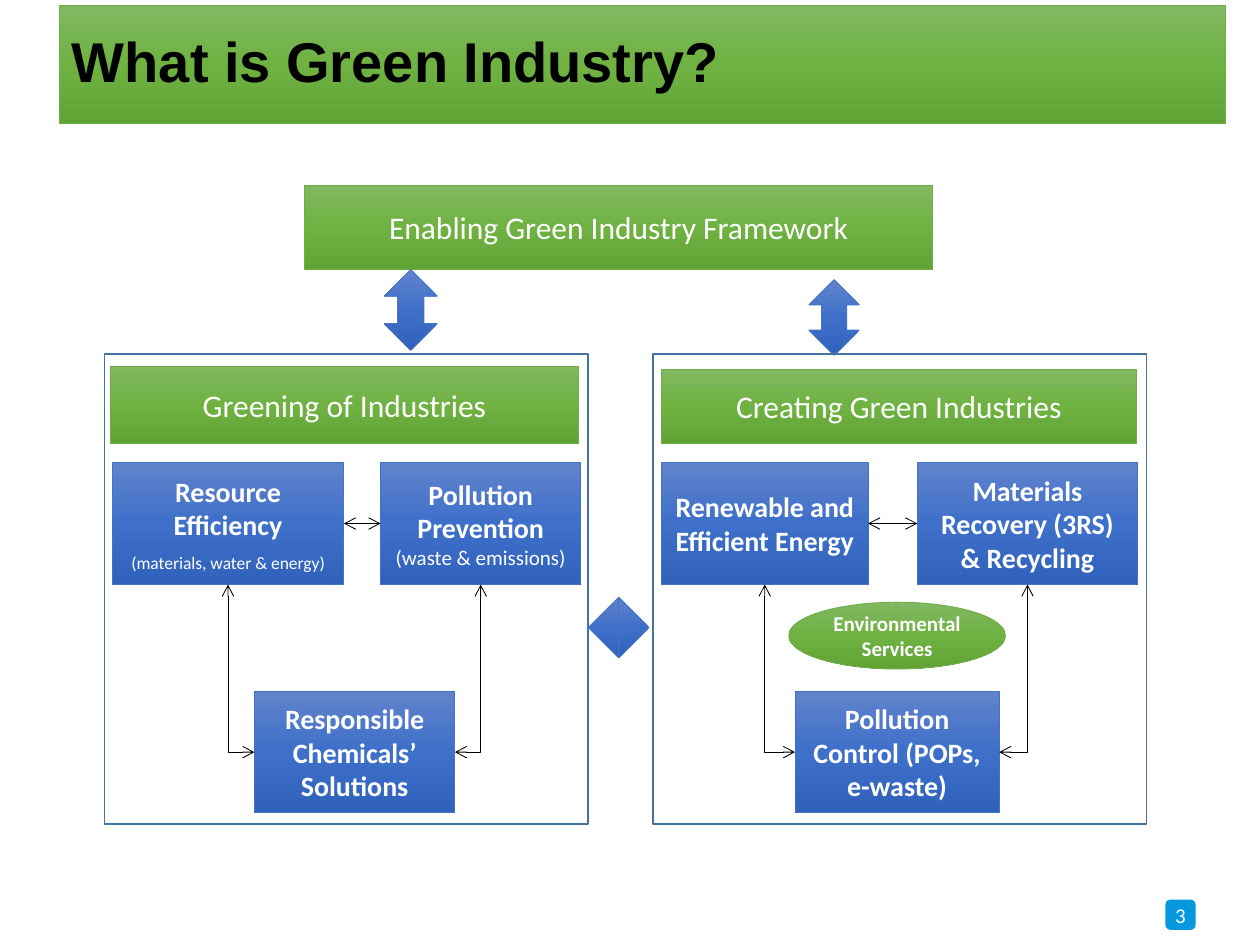
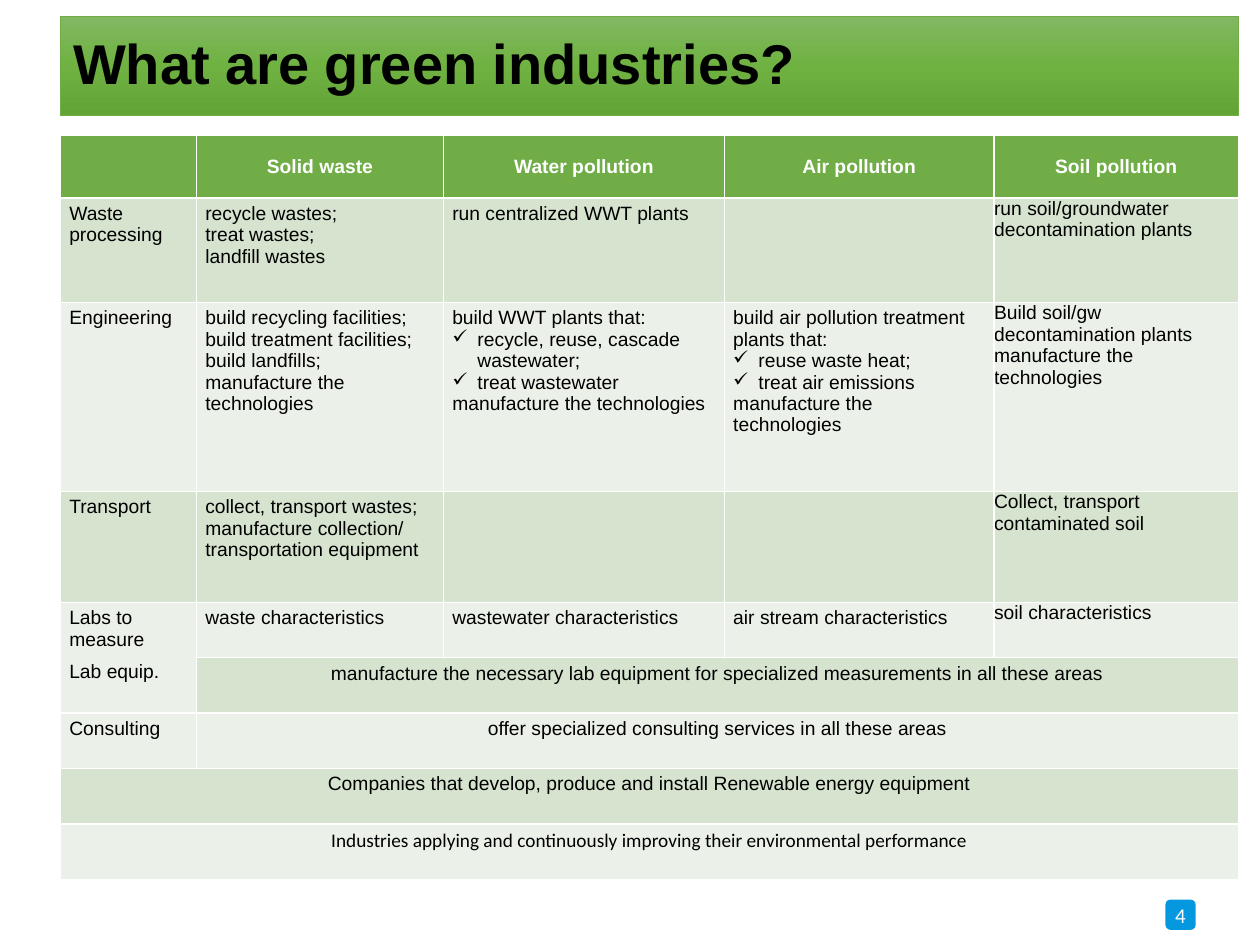
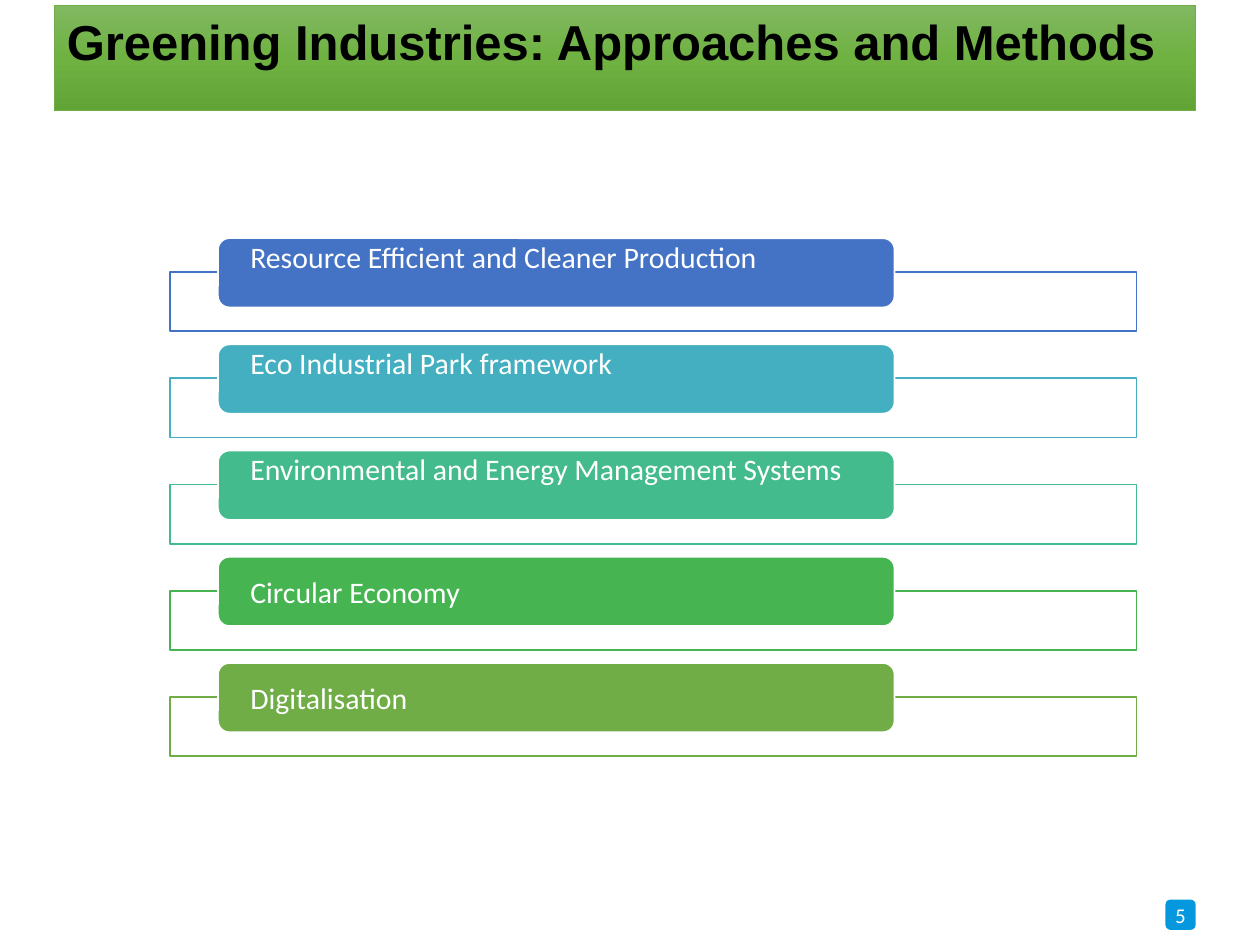
import copy

import pptx
import pptx.dml.color
import pptx.enum.shapes
import pptx.enum.text
import pptx.oxml
import pptx.oxml.ns
import pptx.util

RGBColor = pptx.dml.color.RGBColor
SHAPE = pptx.enum.shapes.MSO_SHAPE
CONNECTOR = pptx.enum.shapes.MSO_CONNECTOR
ALIGN = pptx.enum.text.PP_ALIGN
ANCHOR = pptx.enum.text.MSO_ANCHOR
Pt = pptx.util.Pt
qn = pptx.oxml.ns.qn

BLACK = RGBColor(0x00, 0x00, 0x00)
WHITE = RGBColor(0xFF, 0xFF, 0xFF)
GREEN = RGBColor(0x70, 0xAD, 0x47)
BLUE = RGBColor(0x44, 0x72, 0xC4)
TEAL = RGBColor(0x43, 0xAF, 0xC0)
MINT = RGBColor(0x43, 0xBB, 0x8D)
LEAF = RGBColor(0x45, 0xB4, 0x51)
FRAME_BLUE = RGBColor(0x43, 0x73, 0x9E)
BADGE_BLUE = RGBColor(0x06, 0x98, 0xDF)
BAND_DARK = RGBColor(0xD5, 0xE3, 0xCF)
BAND_LIGHT = RGBColor(0xEB, 0xF1, 0xE9)
GREEN_SHADES = [RGBColor(0x81, 0xB8, 0x61), RGBColor(0x6F, 0xB2, 0x42), RGBColor(0x62, 0xA3, 0x36)]
BLUE_SHADES = [RGBColor(0x61, 0x83, 0xCB), RGBColor(0x3E, 0x70, 0xCA), RGBColor(0x30, 0x62, 0xBB)]

presentation = pptx.Presentation()
presentation.slide_width = pptx.util.Inches(10)
presentation.slide_height = pptx.util.Inches(7.5)
GRID = presentation.slide_width / 100


def style(shape, fill, line, width=0.5):
    if isinstance(fill, list):
        shape.fill.gradient()
        shape.fill.gradient_angle = 270
        first_stop = shape._element.spPr.find(".//" + qn("a:gs"))
        first_stop.addnext(copy.deepcopy(first_stop))
        for stop, color, position in zip(shape.fill.gradient_stops, fill, (0, 0.5, 1)):
            stop.color.rgb = color
            stop.position = position
    elif fill is None:
        shape.fill.background()
    else:
        shape.fill.solid()
        shape.fill.fore_color.rgb = fill
    if line is None:
        shape.line.fill.background()
    else:
        shape.line.color.rgb = line
        shape.line.width = Pt(width)
    shape.shadow.inherit = False
    return shape


def write(frame, lines, color, alignment, **font_format):
    for index, line in enumerate(lines):
        paragraph = frame.add_paragraph() if index else frame.paragraphs[0]
        paragraph.alignment = alignment
        for text, changes in [(line, {})] if isinstance(line, str) else line:
            run = paragraph.add_run()
            run.text = text
            run.font.color.rgb = color
            for name, value in {"name": "Calibri", "bold": False, **font_format, **changes}.items():
                setattr(run.font, name, value)


TITLES = [
    ("What is Green Industry?", (4.7, 0.4, 92.6, 9.4), 32, ANCHOR.MIDDLE, 0.9),
    ("What are green industries?", (4.8, 1.3, 93.5, 7.9), 32, ANCHOR.MIDDLE, 0.9),
    ("Greening Industries: Approaches and Methods", (4.3, 0.4, 90.6, 8.4), 28, ANCHOR.TOP, 1.0),
]
slides = []
for number, (text, box, size, anchor, spacing) in enumerate(TITLES, 3):
    slide = presentation.slides.add_slide(presentation.slide_layouts[5])
    slides.append(slide)
    title = slide.shapes.title
    for name, value in zip(("left", "top", "width", "height"), box):
        setattr(title, name, int(value * GRID))
    style(title, GREEN_SHADES, GREEN)
    frame = title.text_frame
    frame_format = {"auto_size": pptx.enum.text.MSO_AUTO_SIZE.NONE, "word_wrap": True, "vertical_anchor": anchor}
    for name, value in frame_format.items():
        setattr(frame, name, value)
    write(frame, [text], BLACK, ALIGN.LEFT, name="Arial", size=Pt(size), bold=True)
    frame.paragraphs[0].line_spacing = spacing

    badge_box = [int(value * GRID) for value in (92.5, 71.4, 2.4, 2.4)]
    badge = style(slide.shapes.add_shape(SHAPE.ROUNDED_RECTANGLE, *badge_box), BADGE_BLUE, None)
    for side in ("left", "top", "right", "bottom"):
        setattr(badge.text_frame, "margin_" + side, 0)
    write(badge.text_frame, [str(number)], WHITE, ALIGN.CENTER, size=Pt(12))

framework_slide, table_slide, methods_slide = slides

ARROW = SHAPE.UP_DOWN_ARROW
RECTANGLE = SHAPE.RECTANGLE
HEADING = {"size": Pt(18)}
TOPIC = {"size": Pt(16), "bold": True}
DIAGRAM = [
    ("framework", RECTANGLE, (24.2, 14.7, 49.8, 6.7), GREEN, ["Enabling Green Industry Framework"], HEADING),
    ("greening arrow", ARROW, (30.5, 21.4, 4.2, 6.4), BLUE, [], {}),
    ("creating arrow", ARROW, (64.2, 22.2, 4, 6), BLUE, [], {}),
    ("link", SHAPE.LEFT_RIGHT_ARROW, (46.7, 47.4, 4.8, 4.8), BLUE, [], {}),
    ("greening frame", RECTANGLE, (8.3, 28.1, 38.4, 37.3), None, [], {}),
    ("greening", RECTANGLE, (8.8, 29.1, 37.1, 6.1), GREEN, ["Greening of Industries"], HEADING),
    ("efficiency", RECTANGLE, (8.9, 36.7, 18.4, 9.7), BLUE,
     ["Resource Efficiency", [("(materials, water & energy)", {"size": Pt(10), "bold": False})]], TOPIC),
    ("prevention", RECTANGLE, (30.2, 36.7, 15.9, 9.7), BLUE,
     [[("Pollution Prevention ", {}), ("(waste & emissions)", {"size": Pt(12), "bold": False})]], TOPIC),
    ("chemicals", RECTANGLE, (20.2, 54.9, 15.9, 9.6), BLUE, ["Responsible Chemicals’ Solutions"], TOPIC),
    ("creating frame", RECTANGLE, (51.8, 28.1, 39.2, 37.3), None, [], {}),
    ("creating", RECTANGLE, (52.5, 29.3, 37.7, 5.9), GREEN, ["Creating Green Industries"], HEADING),
    ("energy", RECTANGLE, (52.5, 36.7, 16.4, 9.7), BLUE, ["Renewable and Efficient Energy"], TOPIC),
    ("recovery", RECTANGLE, (72.8, 36.7, 17.5, 9.7), BLUE, ["Materials Recovery (3RS) & Recycling"], TOPIC),
    ("control", RECTANGLE, (63.1, 54.9, 16.2, 9.6), BLUE, ["Pollution Control (POPs, e-waste)"], TOPIC),
    ("services", SHAPE.OVAL, (62.6, 47.8, 17.2, 5.3), GREEN, ["Environmental Services"],
     {"size": Pt(12), "bold": True}),
]
SHADES = {GREEN: GREEN_SHADES, BLUE: BLUE_SHADES}
diagram = {}
for key, kind, box, color, lines, font_format in DIAGRAM:
    shape = framework_slide.shapes.add_shape(kind, *[int(value * GRID) for value in box])
    if color is None:
        style(shape, None, FRAME_BLUE, 1)
    else:
        style(shape, SHADES[color], color)
    write(shape.text_frame, lines, WHITE, ALIGN.CENTER, **font_format)
    diagram[key] = shape
diagram["link"].adjustments[0] = 0
diagram["link"].adjustments[1] = 0.5
diagram["efficiency"].text_frame.paragraphs[1].space_before = Pt(6)

TOP, LEFT, BOTTOM, RIGHT = range(4)
for first, second, base in [("efficiency", "prevention", "chemicals"), ("energy", "recovery", "control")]:
    for start, start_site, end, end_site in [
        (first, RIGHT, second, LEFT),
        (base, LEFT, first, BOTTOM),
        (base, RIGHT, second, BOTTOM),
    ]:
        straight = start == first
        connector = framework_slide.shapes.add_connector(
            CONNECTOR.STRAIGHT if straight else CONNECTOR.ELBOW, 0, 0, 0, 0)
        connector.begin_connect(diagram[start], start_site)
        connector.end_connect(diagram[end], end_site)
        connector.line.color.rgb = BLACK
        connector.line.width = Pt(0.5)
        properties = connector._element.spPr
        if not straight:
            properties.find(qn("a:prstGeom")).set("prst", "bentConnector2")
        for tag in ("a:headEnd", "a:tailEnd"):
            pptx.oxml.xmlchemy.OxmlElement
            end_mark = properties.find(qn("a:ln")).makeelement(qn(tag), {"type": "arrow"})
            properties.find(qn("a:ln")).append(end_mark)
        properties.append(properties.makeelement(qn("a:effectLst"), {}))

COLUMNS = [10.8, 19.6, 22.3, 21.4, 19.4]
ROWS = [5, 8.3, 15, 8.8, 4.4, 4.4, 4.4, 4.4, 4.4]
MANUFACTURE = "manufacture the technologies"
CELLS = [
    [[], ["Solid waste"], ["Water pollution"], ["Air pollution"], ["Soil pollution"]],
    [["Waste processing"], ["recycle wastes;", "treat wastes;", "landfill wastes"],
     ["run centralized WWT plants"], [], ["run soil/groundwater decontamination plants"]],
    [["Engineering"],
     ["build recycling facilities;", "build treatment facilities;", "build landfills;", MANUFACTURE],
     ["build WWT plants that:", "✓recycle, reuse, cascade wastewater;", "✓treat wastewater", MANUFACTURE],
     ["build air pollution treatment plants that:", "✓reuse waste heat;", "✓treat air emissions", MANUFACTURE],
     ["Build soil/gw decontamination plants", MANUFACTURE]],
    [["Transport"], ["collect, transport wastes;", "manufacture collection/ transportation equipment"],
     [], [], ["Collect, transport contaminated soil"]],
    [["Labs to measure", "Lab equip."], ["waste characteristics"], ["wastewater characteristics"],
     ["air stream characteristics"], ["soil characteristics"]],
    [[], ["manufacture the necessary lab equipment for specialized measurements in all these areas"]],
    [["Consulting"], ["offer specialized consulting services in all these areas"]],
    [["Companies that develop, produce and install Renewable energy equipment"]],
    [["Industries applying and continuously improving their environmental performance"]],
]
table_box = [int(value * GRID) for value in (4.8, 10.7, sum(COLUMNS), sum(ROWS))]
table = table_slide.shapes.add_table(len(ROWS), len(COLUMNS), *table_box).table
for column, width in zip(table.columns, COLUMNS):
    column.width = int(width * GRID)
for row, height in zip(table.rows, ROWS):
    row.height = int(height * GRID)
for top, left, bottom, right in [(4, 0, 5, 0), (5, 1, 5, 4), (6, 1, 6, 4), (7, 0, 7, 4), (8, 0, 8, 4)]:
    table.cell(top, left).merge(table.cell(bottom, right))

last_row, last_column = len(ROWS) - 1, len(COLUMNS) - 1
for row_index, row_cells in enumerate(CELLS):
    header = row_index == 0
    for column_index in range(len(COLUMNS)):
        cell = table.cell(row_index, column_index)
        cell.fill.solid()
        cell.fill.fore_color.rgb = GREEN if header else BAND_DARK if row_index % 2 else BAND_LIGHT
        if cell.is_spanned:
            continue
        inset = (0, 0) if column_index == last_column else (0.7, 0.4)
        cell_format = {
            "margin_left": int(inset[0] * GRID), "margin_right": int(inset[0] * GRID),
            "margin_top": int(inset[1] * GRID), "margin_bottom": int(inset[1] * GRID),
            "vertical_anchor": ANCHOR.MIDDLE if header else ANCHOR.TOP,
        }
        for name, value in cell_format.items():
            setattr(cell, name, value)
        wide = cell.is_merge_origin and cell.span_width > 1
        lines = row_cells[column_index]
        write(cell.text_frame, [line.lstrip("✓") for line in lines], WHITE if header else BLACK,
              ALIGN.CENTER if header or wide else ALIGN.LEFT, size=Pt(11), bold=header,
              name="Calibri" if row_index == last_row else "Arial")
        for line, paragraph in zip(lines, cell.text_frame.paragraphs):
            if line.startswith("✓"):
                properties = paragraph._p.get_or_add_pPr()
                properties.set("marL", str(int(2 * GRID)))
                properties.set("indent", str(int(-2 * GRID)))
                properties.append(properties.makeelement(qn("a:buChar"), {"char": "✓"}))
table.cell(4, 0).text_frame.paragraphs[0].space_after = Pt(6)

METHODS = [
    ("Resource Efficient and Cleaner Production", BLUE, 2.6),
    ("Eco Industrial Park framework", TEAL, 2.6),
    ("Environmental and Energy Management Systems", MINT, 2.6),
    ("Circular Economy", LEAF, 0),
    ("Digitalisation", GREEN, 0),
]
METHOD_PITCH = 8.43
for index, (text, color, bottom_inset) in enumerate(METHODS):
    pill_top = 18.9 + index * METHOD_PITCH
    strip_box = [int(value * GRID) for value in (13.5, pill_top + 2.7, 76.7, 4.7)]
    style(methods_slide.shapes.add_shape(RECTANGLE, *strip_box), WHITE, color, 1)
    pill_box = [int(value * GRID) for value in (17.3, pill_top, 53.7, 5.5)]
    pill = style(methods_slide.shapes.add_shape(SHAPE.ROUNDED_RECTANGLE, *pill_box), color, WHITE, 1)
    insets = {"margin_left": 2.3, "margin_right": 2.3, "margin_top": 0, "margin_bottom": bottom_inset}
    for name, value in insets.items():
        setattr(pill.text_frame, name, int(value * GRID))
    write(pill.text_frame, [text], WHITE, ALIGN.LEFT, size=Pt(17))

presentation.save("out.pptx")
